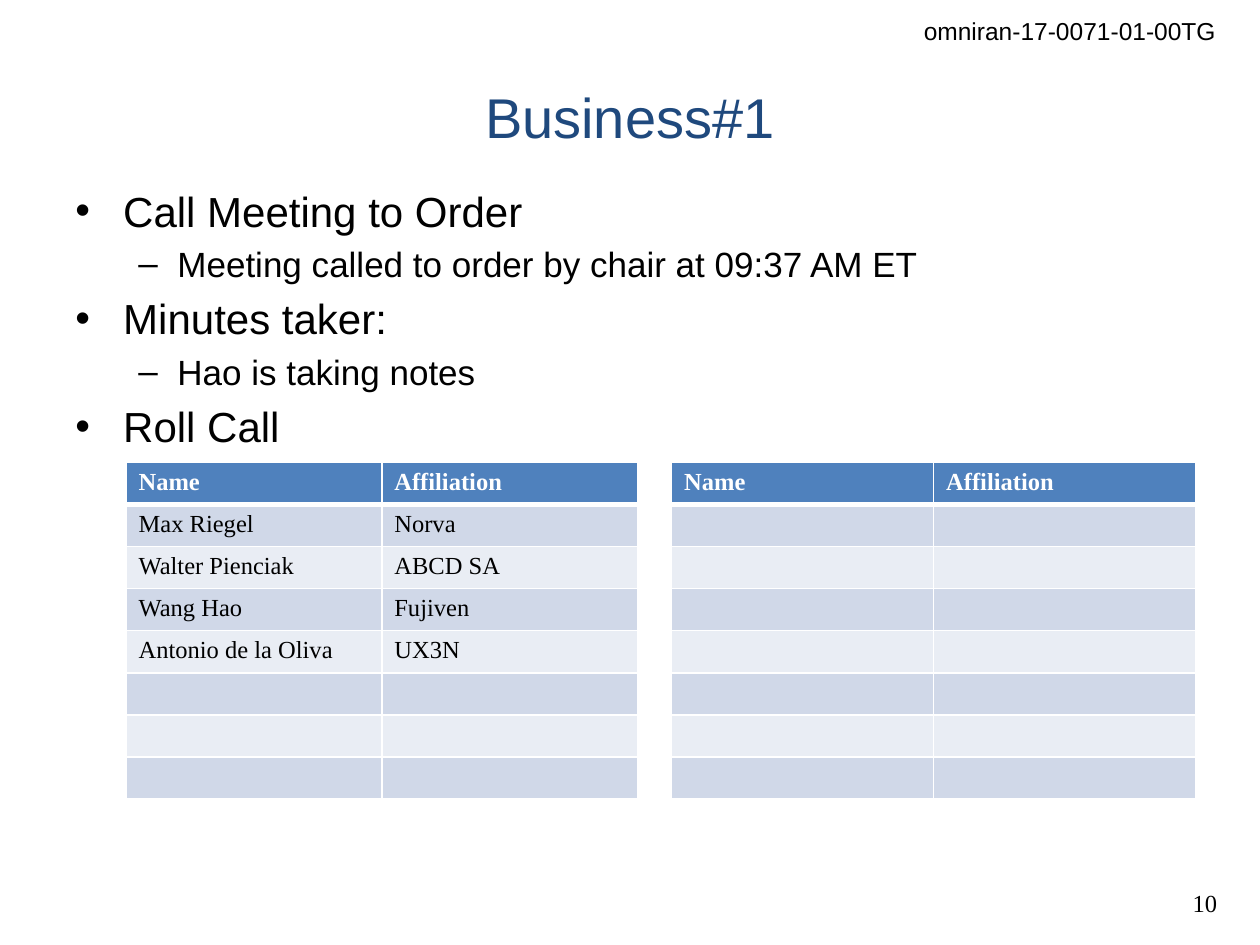
"""Build the meeting business slide with its roll call table."""
from lxml import etree
from pptx import Presentation
from pptx import util as u
from pptx.dml.color import RGBColor
from pptx.enum import text as t
from pptx.oxml import ns

BLACK = RGBColor(0, 0, 0)
WHITE = RGBColor(255, 255, 255)
NAVY = RGBColor(0x1F, 0x49, 0x7D)
BLUE = RGBColor(0x4F, 0x81, 0xBD)
BANDS = (RGBColor(0xE9, 0xED, 0xF4), RGBColor(0xD0, 0xD8, 0xE8))
SANS, SERIF = "Arial", "Times New Roman"
LEVELS = ((24, 0.38, -0.38, "•"), (20, 0.81, -0.31, "–"))
AGENDA = (
    (0, "Call Meeting to Order"),
    (1, "Meeting called to order by chair at 09:37 AM ET"),
    (0, "Minutes taker:"),
    (1, "Hao is taking notes"),
    (0, "Roll Call"),
)
HEADS = ("Name", "Affiliation", "", "Name", "Affiliation")
PEOPLE = (
    ("Max Riegel", "Norva"),
    ("Walter Pienciak", "ABCD SA"),
    ("Wang Hao", "Fujiven"),
    ("Antonio de la Oliva", "UX3N"),
)
COLS = (2.03, 2.03, 0.27, 2.08, 2.08)
ROWS, GAP = 8, 2


def node(up, tag, **attrs):
    return etree.SubElement(up, ns.qn(tag), **attrs)


class Deck:
    def __init__(self):
        self.prs = Presentation()
        self.prs.slide_width, self.prs.slide_height = u.Inches(10), u.Inches(7.5)
        self.slide = self.prs.slides.add_slide(self.prs.slide_layouts[5])

    def run(self, para, words, size, face=SANS, color=BLACK, bold=False):
        run = para.add_run()
        run.text = words
        font = run.font
        font.size, font.name, font.bold = u.Pt(size), face, bold
        font.color.rgb = color

    def title(self, words, *box):
        shape = self.slide.shapes.title
        shape.left, shape.top, shape.width, shape.height = map(u.Inches, box)
        shape.text_frame.vertical_anchor = t.MSO_ANCHOR.MIDDLE
        para = shape.text_frame.paragraphs[0]
        para.alignment = t.PP_ALIGN.CENTER
        self.run(para, words, 32, color=NAVY)

    def label(self, words, face, *box):
        frame = self.slide.shapes.add_textbox(*map(u.Inches, box)).text_frame
        frame.word_wrap = False
        para = frame.paragraphs[0]
        para.alignment = t.PP_ALIGN.RIGHT
        self.run(para, words, 14, face)

    def list(self, items, *box):
        frame = self.slide.shapes.add_textbox(*map(u.Inches, box)).text_frame
        frame.word_wrap = True
        for i, (level, words) in enumerate(items):
            para = frame.add_paragraph() if i else frame.paragraphs[0]
            para.level = level
            size, left, hang, mark = LEVELS[level]
            props = para._p.get_or_add_pPr()
            props.set("marL", str(u.Inches(left)))
            props.set("indent", str(u.Inches(hang)))
            node(node(props, "a:spcBef"), "a:spcPct", val="20000")
            node(props, "a:buFont", typeface=SANS)
            node(props, "a:buChar", char=mark)
            self.run(para, words, size)

    def cell(self, cell, words, fill, head):
        props = cell._tc.get_or_add_tcPr()
        for side in "LRTB":
            width = u.Pt(3 if head and side == "B" else 1)
            line = node(props, f"a:ln{side}", w=str(width))
            node(node(line, "a:solidFill"), "a:srgbClr", val=str(WHITE))
        cell.fill.solid()
        cell.fill.fore_color.rgb = fill
        para = cell.text_frame.paragraphs[0]
        if words:
            self.run(para, words, 14, SERIF, WHITE if head else BLACK, head)
        else:
            end = node(para._p, "a:endParaRPr", sz="1400")
            node(end, "a:latin", typeface=SERIF)

    def table(self, left, top, high):
        shape = self.slide.shapes.add_table(
            ROWS, len(COLS), u.Inches(left), u.Inches(top),
            u.Inches(sum(COLS)), u.Inches(high * ROWS))
        grid = shape.table
        for col, wide in zip(grid.columns, COLS):
            col.width = u.Inches(wide)
        for r in range(ROWS):
            grid.rows[r].height = u.Inches(high)
            names = HEADS if r == 0 else PEOPLE[r - 1] if r <= len(PEOPLE) else ()
            for c in range(len(COLS)):
                fill = WHITE if c == GAP else BANDS[r % 2] if r else BLUE
                words = names[c] if c < len(names) else ""
                self.cell(grid.cell(r, c), words, fill, r == 0)


def main():
    deck = Deck()
    deck.label("omniran-17-0071-01-00TG", SANS, 7.22, 0.08, 2.53, 0.34)
    deck.label("10", SERIF, 9.33, 7, 0.43, 0.34)
    deck.title("Business#1", 0.5, 0.3, 9, 1.25)
    deck.list(AGENDA, 0.5, 1.42, 9, 5.83)
    deck.table(1, 3.67, 0.32)
    deck.prs.save("out.pptx")


if __name__ == "__main__":
    main()
